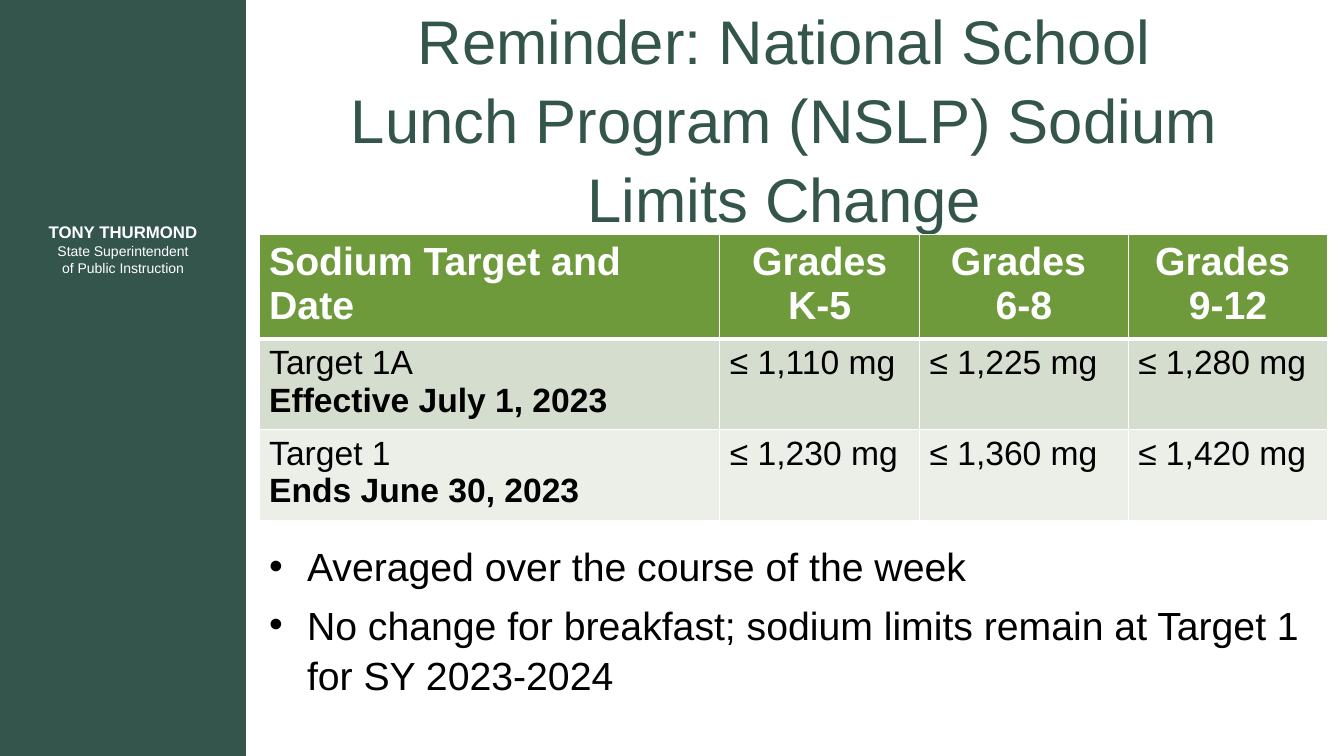
from dataclasses import dataclass

from lxml import etree
from pptx import Presentation
from pptx import util as u
from pptx.dml.color import RGBColor
from pptx.enum import shapes, text
from pptx.oxml import ns

GREEN, WHITE, BLACK = "34554C", "FFFFFF", "000000"
HEADER_FILL = "6E9A3B"
LINE_SPACING = 1.07


@dataclass(frozen=True)
class Line:
    text: str
    bold: bool = False


@dataclass(frozen=True)
class Row:
    cells: tuple[tuple[Line, ...], ...]
    fill: str
    height: float
    size: int
    color: str = BLACK
    header: bool = False


def header_cell(*lines: str) -> tuple[Line, ...]:
    return tuple(Line(line, True) for line in lines)


def target_row(target: str, date: str, limits: tuple[int, ...], fill: str) -> Row:
    label = (Line(target), Line(date, True))
    amounts = tuple((Line(f"≤ {limit:,} mg"),) for limit in limits)
    return Row((label, *amounts), fill, 0.8, 24)


COLUMN_WIDTHS = (4.57, 1.98, 2.07, 1.98)
ROWS = (
    Row((header_cell("Sodium Target and Date"),
         header_cell("Grades", "K-5"),
         header_cell("Grades\u00a0", "6-8"),
         header_cell("Grades\u00a0", "9-12")), HEADER_FILL, 0.78, 28, WHITE, True),
    target_row("Target 1A", "Effective July 1, 2023", (1110, 1225, 1280), "D5DECE"),
    target_row("Target 1", "Ends June 30, 2023", (1230, 1360, 1420), "EBEFE8"),
)
BULLETS = (
    "Averaged over the course of the week",
    "No change for breakfast; sodium limits remain at Target 1 for\u00a0SY 2023-2024",
)


def rgb(color: str) -> RGBColor:
    return RGBColor.from_string(color)


def add_text(para, words: str, *, size: float, color: str, bold: bool = False,
             align=None, spacing=None) -> None:
    """Add formatted words to a paragraph."""
    if align is not None:
        para.alignment = align
    if spacing is not None:
        para.line_spacing = spacing
    span = para.add_run()
    span.text = words
    span.font.name = "Arial"
    span.font.size = u.Pt(size)
    span.font.bold = bold
    span.font.color.rgb = rgb(color)


def next_para(frame, index: int):
    return frame.paragraphs[0] if index == 0 else frame.add_paragraph()


def place(shape, left: float, top: float, width: float, height: float) -> None:
    shape.left, shape.top = u.Inches(left), u.Inches(top)
    shape.width, shape.height = u.Inches(width), u.Inches(height)


def set_border(cell, side: str, width: float) -> None:
    properties = cell._tc.get_or_add_tcPr()
    line = etree.SubElement(properties, ns.qn(f"a:ln{side}"), w=str(u.Pt(width)))
    fill = etree.SubElement(line, ns.qn("a:solidFill"))
    etree.SubElement(fill, ns.qn("a:srgbClr"), val=WHITE)


def add_side_panel(page) -> None:
    panel = page.shapes.add_shape(shapes.MSO_SHAPE.RECTANGLE, 0, 0,
                                  u.Inches(2.44), u.Inches(7.5))
    panel.shadow.inherit = False
    panel.fill.solid()
    panel.fill.fore_color.rgb = rgb(GREEN)
    panel.line.fill.background()

    box = page.shapes.add_textbox(u.Inches(0.29), u.Inches(2.09),
                                  u.Inches(1.86), u.Inches(0.76))
    frame = box.text_frame
    frame.word_wrap = True
    frame.vertical_anchor = text.MSO_ANCHOR.MIDDLE
    para = frame.paragraphs[0]
    center = text.PP_ALIGN.CENTER
    add_text(para, "TONY THURMOND", size=12, color=WHITE, bold=True, align=center)
    for words in ("State Superintendent", "of Public Instruction"):
        para.add_line_break()
        add_text(para, words, size=10, color=WHITE)


def add_title(page) -> None:
    title = page.shapes.title
    place(title, 2.78, 0.89, 10, 1.25)
    frame = title.text_frame
    frame.auto_size = text.MSO_AUTO_SIZE.NONE
    frame.vertical_anchor = text.MSO_ANCHOR.MIDDLE
    frame.margin_bottom = u.Inches(0.78)  # lifts the three lines clear of the table
    add_text(frame.paragraphs[0],
             "Reminder: National School Lunch\u00a0Program (NSLP) Sodium Limits Change",
             size=44, color=GREEN, align=text.PP_ALIGN.CENTER, spacing=LINE_SPACING)


def add_limits_table(page) -> None:
    height = sum(row.height for row in ROWS)
    table = page.shapes.add_table(len(ROWS), len(COLUMN_WIDTHS), u.Inches(2.57),
                                  u.Inches(2.33), u.Inches(sum(COLUMN_WIDTHS)),
                                  u.Inches(height)).table
    for column, width in zip(table.columns, COLUMN_WIDTHS):
        column.width = u.Inches(width)
    for r, row in enumerate(ROWS):
        table.rows[r].height = u.Inches(row.height)
        for c, lines in enumerate(row.cells):
            cell = table.cell(r, c)
            borders = {"L": 1, "R": 1, "T": 3 if r == 1 else 1, "B": 3 if row.header else 1}
            for side, width in borders.items():
                set_border(cell, side, width)
            cell.fill.solid()
            cell.fill.fore_color.rgb = rgb(row.fill)
            centered = row.header and c > 0
            align = text.PP_ALIGN.CENTER if centered else text.PP_ALIGN.LEFT
            for i, line in enumerate(lines):
                add_text(next_para(cell.text_frame, i), line.text, size=row.size,
                         color=row.color, bold=line.bold, align=align)


def add_bullets(page) -> None:
    body = page.placeholders[1]
    place(body, 2.57, 5.3, 10.6, 1.76)
    frame = body.text_frame
    frame.auto_size = text.MSO_AUTO_SIZE.NONE
    for i, words in enumerate(BULLETS):
        para = next_para(frame, i)
        para.space_before = u.Pt(5.6 if i else 0)
        add_text(para, words, size=28, color=BLACK, spacing=LINE_SPACING)


def main() -> None:
    deck = Presentation()
    deck.slide_width, deck.slide_height = u.Inches(13.33), u.Inches(7.5)
    page = deck.slides.add_slide(deck.slide_layouts[1])
    add_side_panel(page)
    add_title(page)
    add_limits_table(page)
    add_bullets(page)
    deck.save("out.pptx")


if __name__ == "__main__":
    main()
